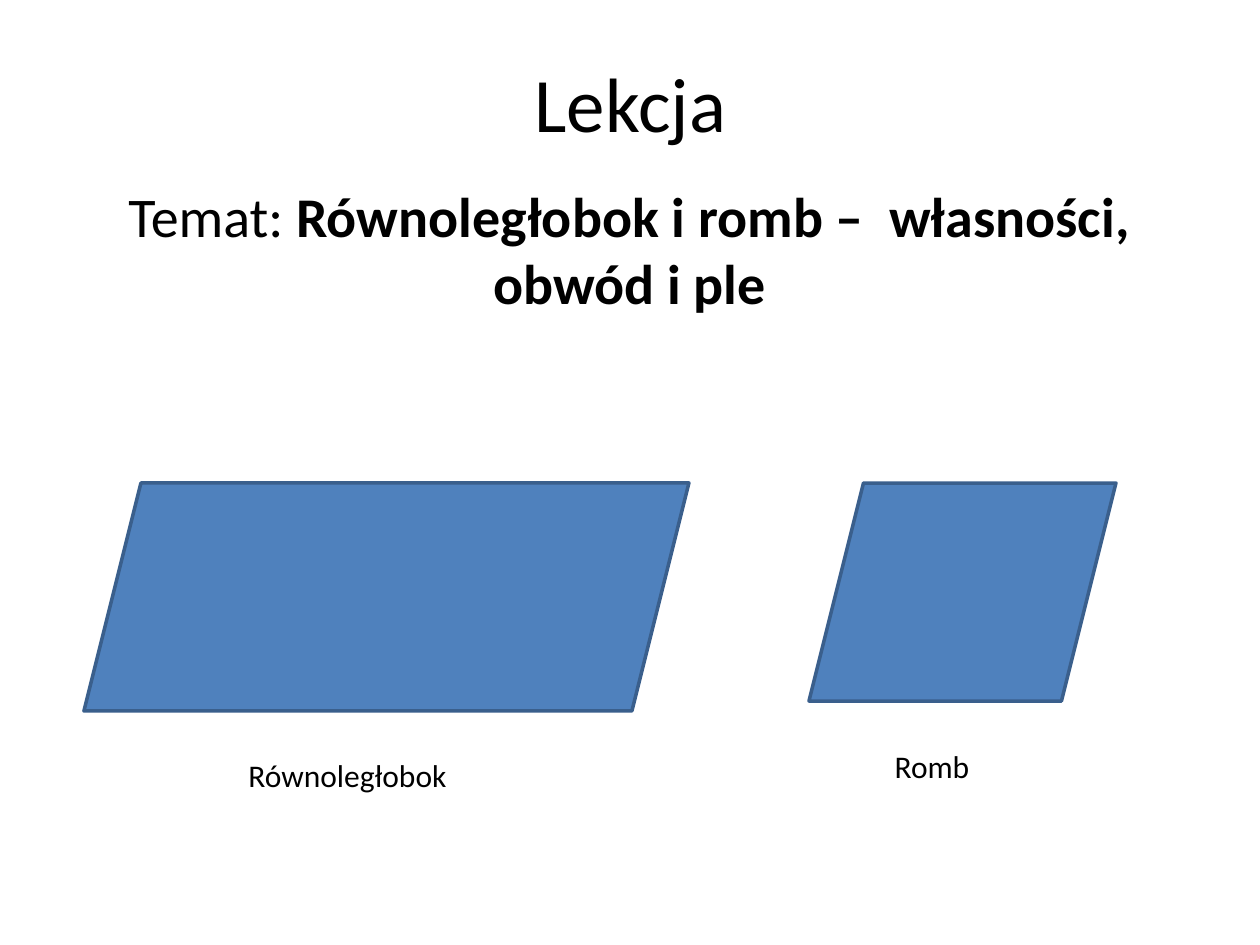
from dataclasses import dataclass
from pptx import Presentation
from pptx import util as u
from pptx.dml.color import RGBColor
from pptx.enum import shapes, text


@dataclass(frozen=True)
class Theme:
    font: str = "Calibri"
    ink: RGBColor = RGBColor(0, 0, 0)
    fill: RGBColor = RGBColor(0x4F, 0x81, 0xBD)
    edge: RGBColor = RGBColor(0x3A, 0x5F, 0x8C)
    head: int = 44
    topic: int = 32
    label: int = 18


theme = Theme()
SCALE = u.Inches(1) / 126


def box(*px):
    return [u.Emu(round(n * SCALE)) for n in px]


def style(par, size):
    par.alignment = text.PP_ALIGN.CENTER
    par.font.name = theme.font
    par.font.size = u.Pt(size)
    par.font.color.rgb = theme.ink


deck = Presentation()
deck.slide_width, deck.slide_height = box(1260, 945)
slide = deck.slides.add_slide(deck.slide_layouts[0])

title = slide.shapes.title
title.left, title.top, title.width, title.height = box(95, 0, 1071, 203)
title.text_frame.vertical_anchor = text.MSO_ANCHOR.MIDDLE
title.text_frame.text = "Lekcja"
style(title.text_frame.paragraphs[0], theme.head)

topic = slide.placeholders[1]
topic.left, topic.top, topic.width, topic.height = box(44, 175, 1171, 242)
par = topic.text_frame.paragraphs[0]
par.add_run().text = "Temat: "
bold = par.add_run()
bold.text = "Równoległobok i romb –  własności, obwód i ple"
bold.font.bold = True
style(par, theme.topic)

figures = [
    ("Równoległobok", (84, 483, 605, 228), (144, 750, 407, 50)),
    ("Romb", (809, 483, 307, 218), (828, 741, 208, 50)),
]
for name, area, spot in figures:
    figure = slide.shapes.add_shape(shapes.MSO_SHAPE.PARALLELOGRAM, *box(*area))
    figure.shadow.inherit = False
    figure.fill.solid()
    figure.fill.fore_color.rgb = theme.fill
    figure.line.color.rgb = theme.edge
    figure.line.width = u.Pt(2)

    frame = slide.shapes.add_textbox(*box(*spot)).text_frame
    frame.word_wrap = True
    frame.auto_size = text.MSO_AUTO_SIZE.SHAPE_TO_FIT_TEXT
    frame.text = name
    style(frame.paragraphs[0], theme.label)

deck.save("out.pptx")
